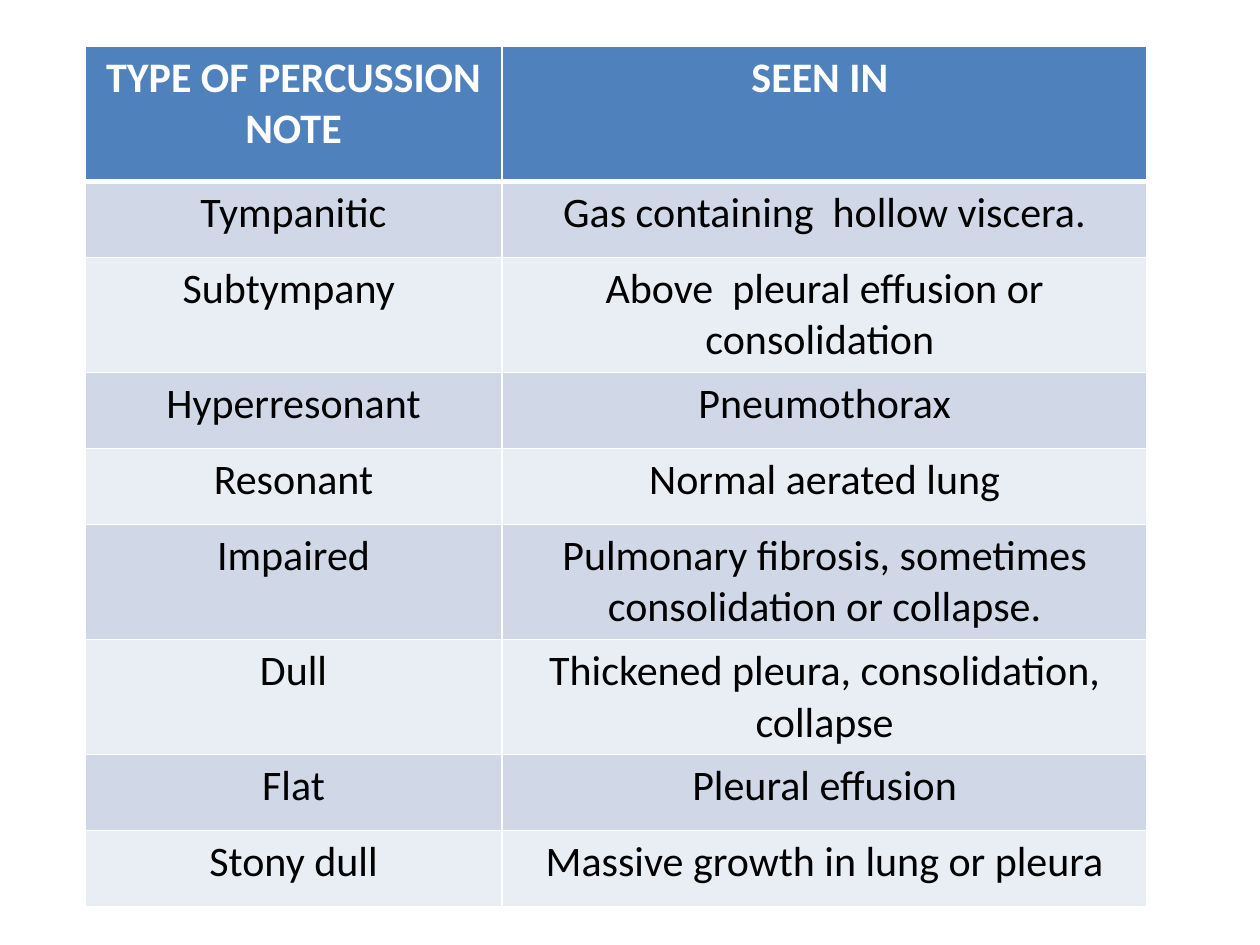
from lxml.etree import SubElement
from pptx import Presentation
from pptx.dml.color import RGBColor
from pptx.enum.text import PP_ALIGN
from pptx.oxml.ns import qn
from pptx.util import Pt

WHITE = RGBColor(0xFF, 0xFF, 0xFF)
BLACK = RGBColor(0x00, 0x00, 0x00)
HEADER_BLUE = RGBColor(0x4F, 0x81, 0xBD)
BAND_DARK = RGBColor(0xD0, 0xD8, 0xE8)
BAND_LIGHT = RGBColor(0xE9, 0xED, 0xF4)

COLUMN_WIDTHS = [238.5, 368.5]
HEADER_HEIGHT = 77.5
ROW_HEIGHT = 43.4

PERCUSSION_NOTES = [
    ("TYPE OF PERCUSSION NOTE", "SEEN IN "),
    ("Tympanitic", "Gas containing  hollow viscera."),
    ("Subtympany ", "Above  pleural effusion or consolidation "),
    ("Hyperresonant", "Pneumothorax"),
    ("Resonant", "Normal aerated lung"),
    ("Impaired", "Pulmonary fibrosis, sometimes consolidation or collapse."),
    ("Dull", "Thickened pleura, consolidation, collapse"),
    ("Flat", "Pleural effusion"),
    ("Stony dull", "Massive growth in lung or pleura"),
]


def add_border(cell, side, width):
    """Add a white border; call before the cell's fill is set."""
    line = SubElement(cell._tc.get_or_add_tcPr(), qn(f"a:ln{side}"), w=str(Pt(width)))
    fill = SubElement(line, qn("a:solidFill"))
    SubElement(fill, qn("a:srgbClr"), val=str(WHITE))


presentation = Presentation()
presentation.slide_width = Pt(720)
presentation.slide_height = Pt(540)
slide = presentation.slides.add_slide(presentation.slide_layouts[6])

# Table grid
table_height = HEADER_HEIGHT + ROW_HEIGHT * (len(PERCUSSION_NOTES) - 1)
table = slide.shapes.add_table(
    len(PERCUSSION_NOTES), len(COLUMN_WIDTHS),
    Pt(48.5), Pt(26.2), Pt(sum(COLUMN_WIDTHS)), Pt(table_height),
).table
for column, width in zip(table.columns, COLUMN_WIDTHS):
    column.width = Pt(width)

# Cells: header first, then alternating bands
for row_index, texts in enumerate(PERCUSSION_NOTES):
    is_header = row_index == 0
    table.rows[row_index].height = Pt(HEADER_HEIGHT if is_header else ROW_HEIGHT)
    if is_header:
        fill_color = HEADER_BLUE
    else:
        fill_color = BAND_DARK if row_index % 2 else BAND_LIGHT

    for column_index, text in enumerate(texts):
        cell = table.cell(row_index, column_index)
        add_border(cell, "L", 1)
        add_border(cell, "R", 1)
        add_border(cell, "T", 3 if row_index == 1 else 1)
        add_border(cell, "B", 3 if is_header else 1)
        cell.fill.solid()
        cell.fill.fore_color.rgb = fill_color

        cell.text_frame.text = text
        paragraph = cell.text_frame.paragraphs[0]
        paragraph.alignment = PP_ALIGN.CENTER
        font = paragraph.runs[0].font
        font.name = "Calibri"
        font.size = Pt(24)
        font.bold = is_header
        font.color.rgb = WHITE if is_header else BLACK

presentation.save("out.pptx")
